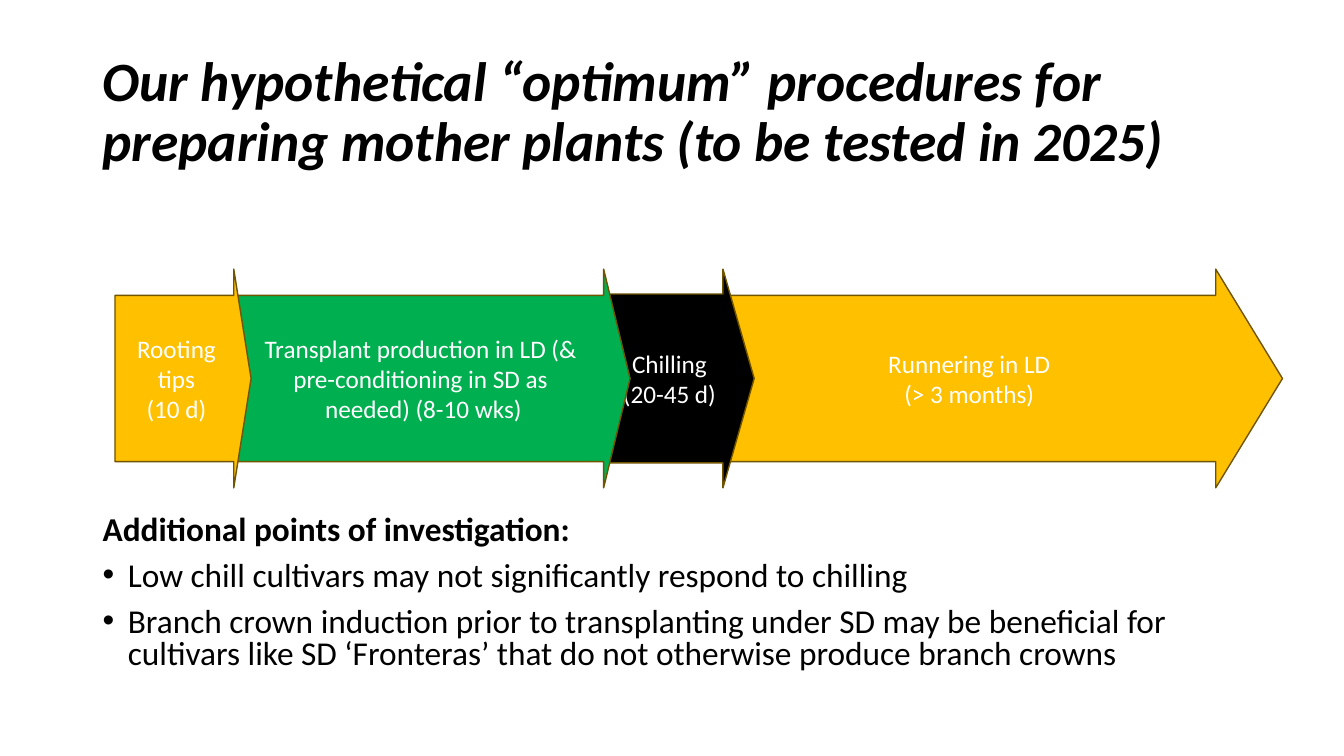
from pptx import Presentation
from pptx import util as u
from pptx.dml.color import RGBColor
from pptx.enum import shapes, text
from lxml import etree

COLORS = {"gold": "FFC000", "green": "00B050", "black": "000000",
          "white": "FFFFFF", "edge": "705400"}
TITLE = "Our hypothetical “optimum” procedures for preparing mother plants (to be tested in 2025)"
HEAD = "Additional points of investigation:"
POINTS = [
    "Low chill cultivars may not significantly respond to chilling",
    "Branch crown induction prior to transplanting under SD may be beneficial for "
    "cultivars like SD ‘Fronteras’ that do not otherwise produce branch crowns",
]
STAGES = [
    (1.14, 1.35, "gold", (0.76, 0.127), ["Rooting tips", "(10 d)"]),
    (2.35, 3.9, "green", (0.76, 0.121),
     ["Transplant production in LD (& ", "pre-conditioning in SD as ", "needed) (8-10 wks)"]),
    (6.04, 1.44, "black", (0.772, 0.215), ["Chilling", "(20-45 d)"]),
    (7.01, 5.71, "gold", (0.76, 0.305), ["Runnering in LD", "(> 3 months)"]),
]
LEFT, WIDTH = 0.92, 11.5
ROW, TALL = 2.67, 2.17
NS = "{http://schemas.openxmlformats.org/drawingml/2006/main}"


def rgb(name):
    return RGBColor.from_string(COLORS[name])


def style(item, form):
    for key, value in form.items():
        setattr(item, key, value)


def bullet(para):
    props = para._p.get_or_add_pPr()
    props.set("marL", str(u.Inches(0.25)))
    props.set("indent", str(u.Inches(-0.25)))
    etree.SubElement(props, NS + "buFont").set("typeface", "Arial")
    etree.SubElement(props, NS + "buChar").set("char", "•")


def write(frame, lines, size, color, form, bold=False, italic=False, marks=False):
    frame.word_wrap = True
    for i, line in enumerate(lines):
        para = frame.paragraphs[0] if i == 0 else frame.add_paragraph()
        style(para, form)
        if i == 0:
            para.space_before = u.Pt(0)
        if marks and i:
            bullet(para)
        run = para.add_run()
        run.text = line
        style(run.font, {"name": "Calibri", "size": u.Pt(size), "italic": italic,
                         "bold": bold and i == 0})
        run.font.color.rgb = rgb(color)


def box(slide, top, tall, anchor):
    area = slide.shapes.add_textbox(*map(u.Inches, (LEFT, top, WIDTH, tall)))
    area.text_frame.vertical_anchor = anchor
    return area.text_frame


def arrow(slide, left, width, color, adjust, lines):
    shape = slide.shapes.add_shape(shapes.MSO_SHAPE.RIGHT_ARROW,
                                   *map(u.Inches, (left, ROW, width, TALL)))
    for i, value in enumerate(adjust):
        shape.adjustments[i] = value
    shape.shadow.inherit = False
    shape.fill.solid()
    shape.fill.fore_color.rgb = rgb(color)
    shape.line.color.rgb = rgb("edge")
    shape.line.width = u.Pt(1)
    shape.text_frame.vertical_anchor = text.MSO_ANCHOR.MIDDLE
    write(shape.text_frame, lines, 18, "white", {"alignment": text.PP_ALIGN.CENTER})


def main():
    deck = Presentation()
    style(deck, {"slide_width": u.Inches(13.33), "slide_height": u.Inches(7.5)})
    slide = deck.slides.add_slide(deck.slide_layouts[6])
    write(box(slide, 0.4, 1.45, text.MSO_ANCHOR.MIDDLE), [TITLE], 39.6, "black",
          {"line_spacing": 0.9}, bold=True, italic=True)
    write(box(slide, 5.07, 1.68, text.MSO_ANCHOR.TOP), [HEAD] + POINTS, 23.8, "black",
          {"line_spacing": 0.8, "space_before": u.Pt(10)}, bold=True, marks=True)
    for stage in reversed(STAGES):
        arrow(slide, *stage)
    deck.save("out.pptx")


if __name__ == "__main__":
    main()
